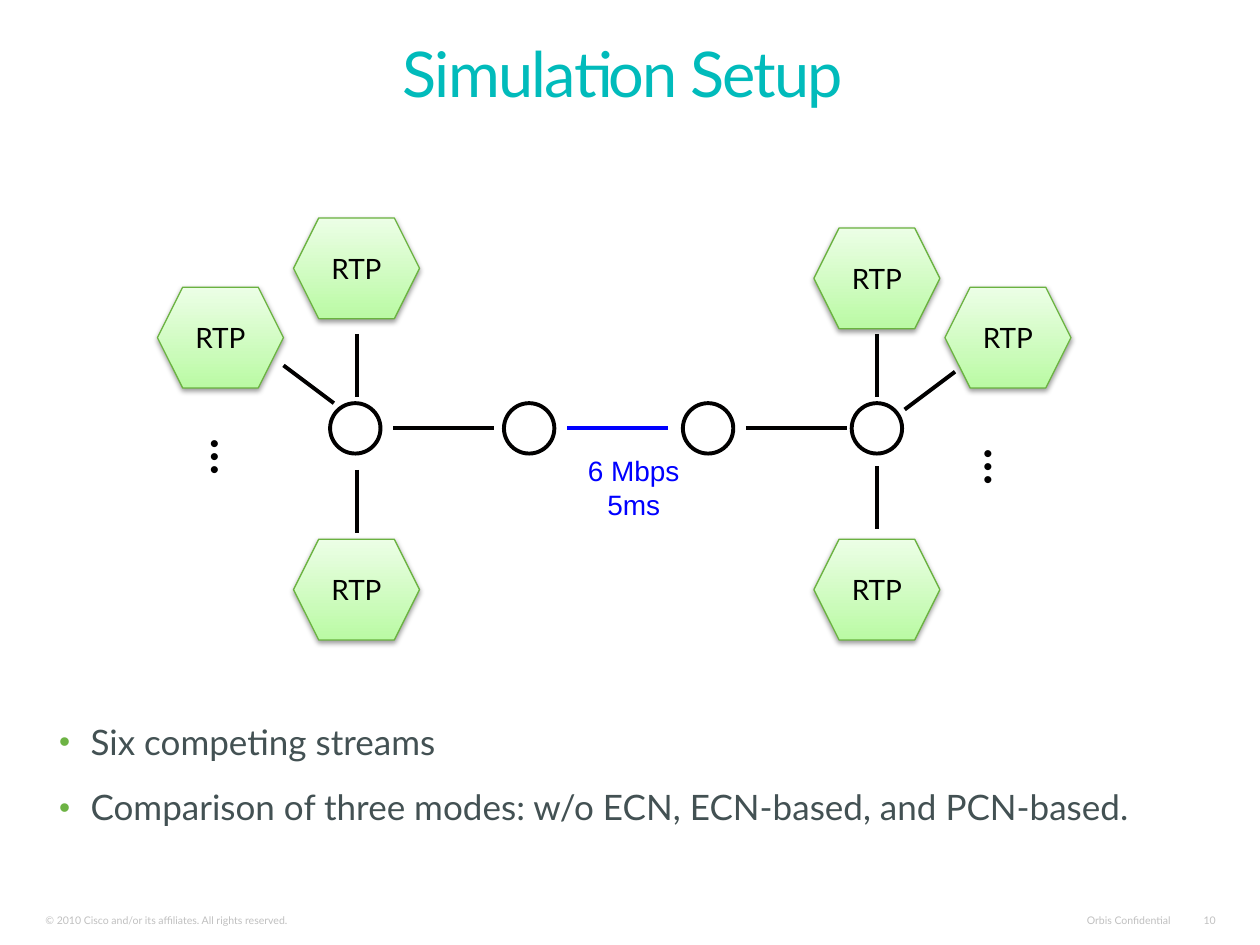
from lxml import etree
from pptx import Presentation
from pptx.dml.color import RGBColor
from pptx.enum.shapes import MSO_CONNECTOR, MSO_SHAPE
from pptx.enum.text import MSO_ANCHOR, MSO_AUTO_SIZE, PP_ALIGN
from pptx.oxml import parse_xml
from pptx.oxml.ns import nsdecls, qn
from pptx.util import Inches, Pt

STRAIGHT = MSO_CONNECTOR.STRAIGHT
HEXAGON, OVAL = MSO_SHAPE.HEXAGON, MSO_SHAPE.OVAL
TOP, MIDDLE, BOTTOM = MSO_ANCHOR.TOP, MSO_ANCHOR.MIDDLE, MSO_ANCHOR.BOTTOM
LEFT, CENTER, RIGHT = PP_ALIGN.LEFT, PP_ALIGN.CENTER, PP_ALIGN.RIGHT
FIT_SHAPE = MSO_AUTO_SIZE.SHAPE_TO_FIT_TEXT

BLACK = RGBColor(0x01, 0x00, 0x00)
BLUE = RGBColor(0x00, 0x00, 0xFF)
TEAL = RGBColor(0x01, 0xBB, 0xBB)
SLATE = RGBColor(0x43, 0x51, 0x53)
GRAY = RGBColor(0xC0, 0xC0, 0xC0)
GREEN = RGBColor(0x6A, 0xB2, 0x40)
GREEN_DARK = RGBColor(0xBA, 0xFA, 0xA4)
GREEN_LIGHT = RGBColor(0xEC, 0xFE, 0xE6)
BULLET = RGBColor(0x6D, 0xB3, 0x44)

SHADOW = (
    f'<a:effectLst {nsdecls("a")}>'
    '<a:outerShdw blurRad="39370" dist="20320" dir="5400000" rotWithShape="0">'
    '<a:srgbClr val="000000"><a:alpha val="38000"/></a:srgbClr>'
    '</a:outerShdw></a:effectLst>'
)

prs = Presentation()
prs.slide_width, prs.slide_height = Inches(10), Inches(7.5)
s = prs.slides.add_slide(prs.slide_layouts[6])


def add_text(box, lines, size, color, font="Lato", align=LEFT, anchor=TOP, wrap=False):
    sp = s.shapes.add_textbox(*[Inches(v) for v in box])
    tf = sp.text_frame
    tf.word_wrap = wrap
    tf.vertical_anchor = anchor
    for i, line in enumerate(lines):
        p = tf.paragraphs[0] if i == 0 else tf.add_paragraph()
        p.alignment = align
        r = p.add_run()
        r.text = line
        r.font.name, r.font.size = font, Pt(size)
        r.font.color.rgb = color
    return sp


# Footer
for box, text, align, wrap in [
    ((0.27, 7.2, 3.6, 0.19), "© 2010 Cisco and/or its affiliates. All rights reserved.", LEFT, True),
    ((8.49, 7.2, 0.89, 0.19), "Orbis Confidential", RIGHT, False),
    ((9.46, 7.2, 0.28, 0.19), "10", RIGHT, False),
]:
    tf = add_text(box, [text], 6, GRAY, align=align, anchor=BOTTOM, wrap=wrap).text_frame
    tf.margin_left = tf.margin_right = Inches(0.09)
    tf.margin_top = tf.margin_bottom = Inches(0.04)

# Title
sp = add_text((0.25, 0, 9.39, 0.92), ["Simulation Setup"], 36, TEAL,
              align=CENTER, anchor=BOTTOM, wrap=True)
p = sp.text_frame.paragraphs[0]
p.line_spacing = 0.8
p.runs[0].font._element.set("spc", "-100")

# Bullets
sp = add_text((0.37, 5.69, 9.38, 1.4),
              ["Six competing streams",
               "Comparison of three modes: w/o ECN, ECN-based, and PCN-based."],
              20, SLATE, wrap=True)
for i, p in enumerate(sp.text_frame.paragraphs):
    pPr = p._p.get_or_add_pPr()
    pPr.set("marL", str(Inches(0.25)))
    pPr.set("indent", str(Inches(-0.25)))
    color = etree.SubElement(pPr, qn("a:buClr"))
    etree.SubElement(color, qn("a:srgbClr"), val=str(BULLET))
    etree.SubElement(pPr, qn("a:buSzPct"), val="90000")
    etree.SubElement(pPr, qn("a:buFont"), typeface="Arial")
    etree.SubElement(pPr, qn("a:buChar"), char="•")
    p.line_spacing = 0.95
    if i > 0:
        p.space_before = Pt(14.8)

# Links between routers and to the endpoints
for x1, y1, x2, y2, color in [
    (3.12, 3.4, 3.92, 3.4, BLACK),
    (4.5, 3.4, 5.3, 3.4, BLUE),
    (5.92, 3.4, 6.72, 3.4, BLACK),
    (2.83, 2.65, 2.83, 3.15, BLACK),
    (2.25, 2.9, 2.65, 3.2, BLACK),
    (2.83, 3.73, 2.83, 4.23, BLACK),
    (6.96, 2.65, 6.96, 3.15, BLACK),
    (7.18, 3.25, 7.58, 2.95, BLACK),
    (6.96, 3.7, 6.96, 4.2, BLACK),
]:
    link = s.shapes.add_connector(STRAIGHT, Inches(x1), Inches(y1), Inches(x2), Inches(y2))
    link.line.color.rgb = color
    link.line.width = Pt(2.25)
    etree.SubElement(link._element.spPr, qn("a:effectLst"))

# Routers
for x in (2.62, 4, 5.42, 6.76):
    sp = s.shapes.add_shape(OVAL, Inches(x), Inches(3.2), Inches(0.4), Inches(0.4))
    sp.shadow.inherit = False
    sp.fill.background()
    sp.line.color.rgb = BLACK
    sp.line.width = Pt(2.25)

# RTP endpoints
for x, y in [(2.33, 1.73), (1.25, 2.28), (2.33, 4.28),
             (6.46, 1.81), (7.5, 2.28), (6.46, 4.28)]:
    sp = s.shapes.add_shape(HEXAGON, Inches(x), Inches(y), Inches(1), Inches(0.8))
    sp.fill.gradient()
    sp.fill.gradient_angle = 90
    for stop, color in zip(sp.fill.gradient_stops, (GREEN_DARK, GREEN_LIGHT)):
        stop.color.rgb = color
    sp.line.color.rgb = GREEN
    sp.line.width = Pt(0.75)
    sp._element.spPr.append(parse_xml(SHADOW))
    tf = sp.text_frame
    tf.vertical_anchor = MIDDLE
    p = tf.paragraphs[0]
    p.alignment = CENTER
    r = p.add_run()
    r.text = "RTP"
    r.font.name, r.font.size = "Lato", Pt(16)
    r.font.color.rgb = BLACK

# Bottleneck label
sp = add_text((4.56, 3.55, 0.94, 0.64), ["6 Mbps", "5ms"], 16, BLUE, font="Arial", align=CENTER)
sp.text_frame.auto_size = FIT_SHAPE

# Vertical ellipses
for x, y in [(1.56, 3.34), (7.7, 3.42)]:
    sp = add_text((x, y, 0.58, 0.64), ["..."], 32, BLACK)
    sp.text_frame.auto_size = FIT_SHAPE
    sp.rotation = 90

prs.save("out.pptx")
